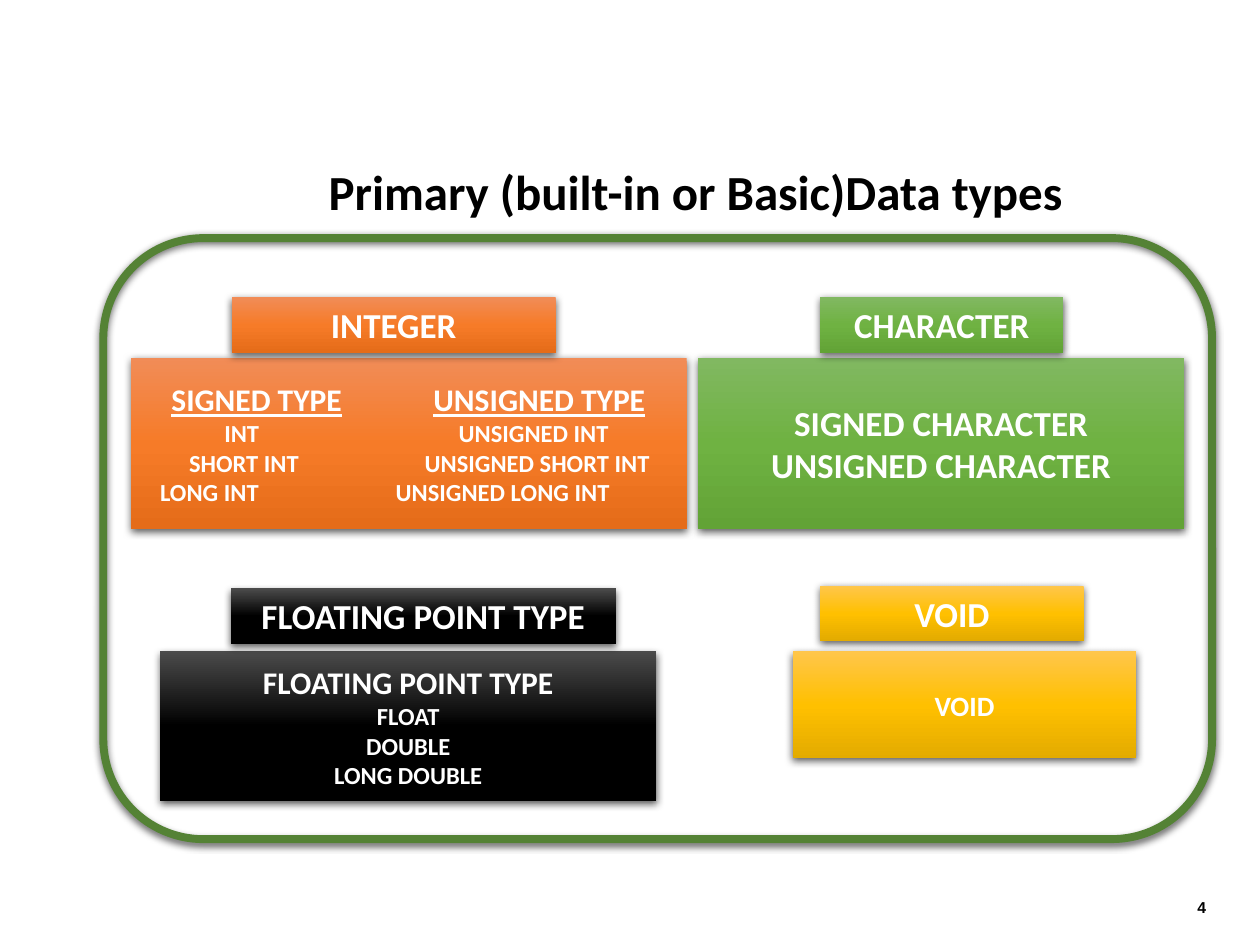
from copy import deepcopy

from lxml import etree
from pptx import Presentation
from pptx.dml.color import RGBColor
from pptx.enum.shapes import MSO_SHAPE
from pptx.enum.text import MSO_ANCHOR, PP_ALIGN
from pptx.oxml.ns import qn
from pptx.util import Inches, Pt

RECT, ROUND = MSO_SHAPE.RECTANGLE, MSO_SHAPE.ROUNDED_RECTANGLE
TOP, MIDDLE = MSO_ANCHOR.TOP, MSO_ANCHOR.MIDDLE
LEFT, CENTER, RIGHT = PP_ALIGN.LEFT, PP_ALIGN.CENTER, PP_ALIGN.RIGHT

ORANGE = ["F18C57", "F67B28", "E56C19"]
GREEN = ["81B861", "6FB242", "62A336"]
BLACK = ["4B4B4B", "000000", "000000"]
GOLD = ["FFC64B", "FFC000", "E3AB00"]


def add_box(kind, place, shades=None):
    """Add a shape with a soft drop shadow and a three-stop gradient, or no fill."""
    box = slide.shapes.add_shape(kind, *map(Inches, place))
    if shades:
        box.fill.gradient()
        box.fill.gradient_angle = 270
        stops = box._element.spPr.find(".//" + qn("a:gsLst"))
        stops.append(deepcopy(stops[-1]))
        for stop, pos, shade in zip(box.fill.gradient_stops, (0, 0.5, 1), shades):
            stop.position = pos
            stop.color.rgb = RGBColor.from_string(shade)
        box.line.fill.background()
    else:
        box.fill.background()
    box.shadow.inherit = False
    effects = box._element.spPr.find(qn("a:effectLst"))
    shadow = etree.SubElement(effects, qn("a:outerShdw"), blurRad=str(Pt(4.5)),
                              dist=str(Pt(1.5)), dir="5400000", rotWithShape="0")
    color = etree.SubElement(shadow, qn("a:srgbClr"), val="000000")
    etree.SubElement(color, qn("a:alpha"), val="63000")
    return box


def add_run(para, text, size, color="FFFFFF", **extra):
    run = para.add_run()
    run.text = text
    style = {"name": "Calibri", "size": Pt(size), "bold": True, **extra}
    for key, value in style.items():
        setattr(run.font, key, value)
    run.font.color.rgb = RGBColor.from_string(color)


deck = Presentation()
deck.slide_width, deck.slide_height = Inches(10), Inches(7.5)
slide = deck.slides.add_slide(deck.slide_layouts[6])

# Title and page number
labels = [
    ((2.27, 1.2, 6.5, 0.69), "Primary (built-in or Basic)Data types", 28, "Calibri", CENTER, 0.9),
    ((6.05, 7.05, 3.62, 0.3), "4", 9, "Arial", RIGHT, 1.0),
]
for place, text, size, face, align, space in labels:
    frame = slide.shapes.add_textbox(*map(Inches, place)).text_frame
    frame.word_wrap = True
    frame.vertical_anchor = MIDDLE
    para = frame.paragraphs[0]
    para.alignment, para.line_spacing = align, space
    add_run(para, text, size, "000000", name=face)

# Integer panel: each row has its own pair of tab stops, in inches
panel = add_box(RECT, (1.04, 2.84, 4.41, 1.36), ORANGE)
frame = panel.text_frame
frame.word_wrap = True
frame.vertical_anchor = MIDDLE
frame.margin_left = frame.margin_right = 0
rows = [
    ("SIGNED TYPE", "UNSIGNED TYPE", 0.32, 2.4, 18),
    ("INT", "UNSIGNED INT", 0.74, 2.6, 14),
    ("SHORT INT", "UNSIGNED SHORT INT", 0.46, 2.33, 14),
    ("LONG INT", "UNSIGNED LONG INT", 0.23, 2.1, 14),
]
for i, (signed, plain, first, second, size) in enumerate(rows):
    para = frame.add_paragraph() if i else frame.paragraphs[0]
    para.alignment = LEFT
    tabs = etree.SubElement(para._p.get_or_add_pPr(), qn("a:tabLst"))
    for stop, text in ((first, signed), (second, plain)):
        etree.SubElement(tabs, qn("a:tab"), pos=str(Inches(stop)), algn="l")
        add_run(para, "\t", size)
        add_run(para, text, size, underline=i == 0)

# Centred panels and the headers above them
boxes = [
    ((5.54, 2.84, 3.86, 1.36), GREEN, MIDDLE,
     [("SIGNED CHARACTER", 20), ("UNSIGNED CHARACTER", 20)]),
    ((1.27, 5.17, 3.94, 1.19), BLACK, MIDDLE,
     [("FLOATING POINT TYPE", 18), ("FLOAT", 14), ("DOUBLE", 14), ("LONG DOUBLE", 14)]),
    ((6.29, 5.17, 2.73, 0.85), GOLD, MIDDLE, [("VOID", 16)]),
    ((1.84, 2.36, 2.57, 0.44), ORANGE, TOP, [("INTEGER", 20)]),
    ((6.51, 2.36, 1.93, 0.44), GREEN, TOP, [("CHARACTER", 20)]),
    ((1.83, 4.67, 3.06, 0.44), BLACK, TOP, [("FLOATING POINT TYPE", 20)]),
    ((6.51, 4.65, 2.09, 0.44), GOLD, TOP, [("VOID", 20)]),
]
for place, shades, anchor, lines in boxes:
    frame = add_box(RECT, place, shades).text_frame
    frame.word_wrap = anchor == TOP
    frame.vertical_anchor = anchor
    for i, (text, size) in enumerate(lines):
        para = frame.add_paragraph() if i else frame.paragraphs[0]
        para.alignment = CENTER
        add_run(para, text, size)

# Frame around all groups
border = add_box(ROUND, (0.82, 1.89, 8.8, 4.77))
border.line.color.rgb = RGBColor.from_string("548235")
border.line.width = Pt(4.5)

deck.save("out.pptx")
